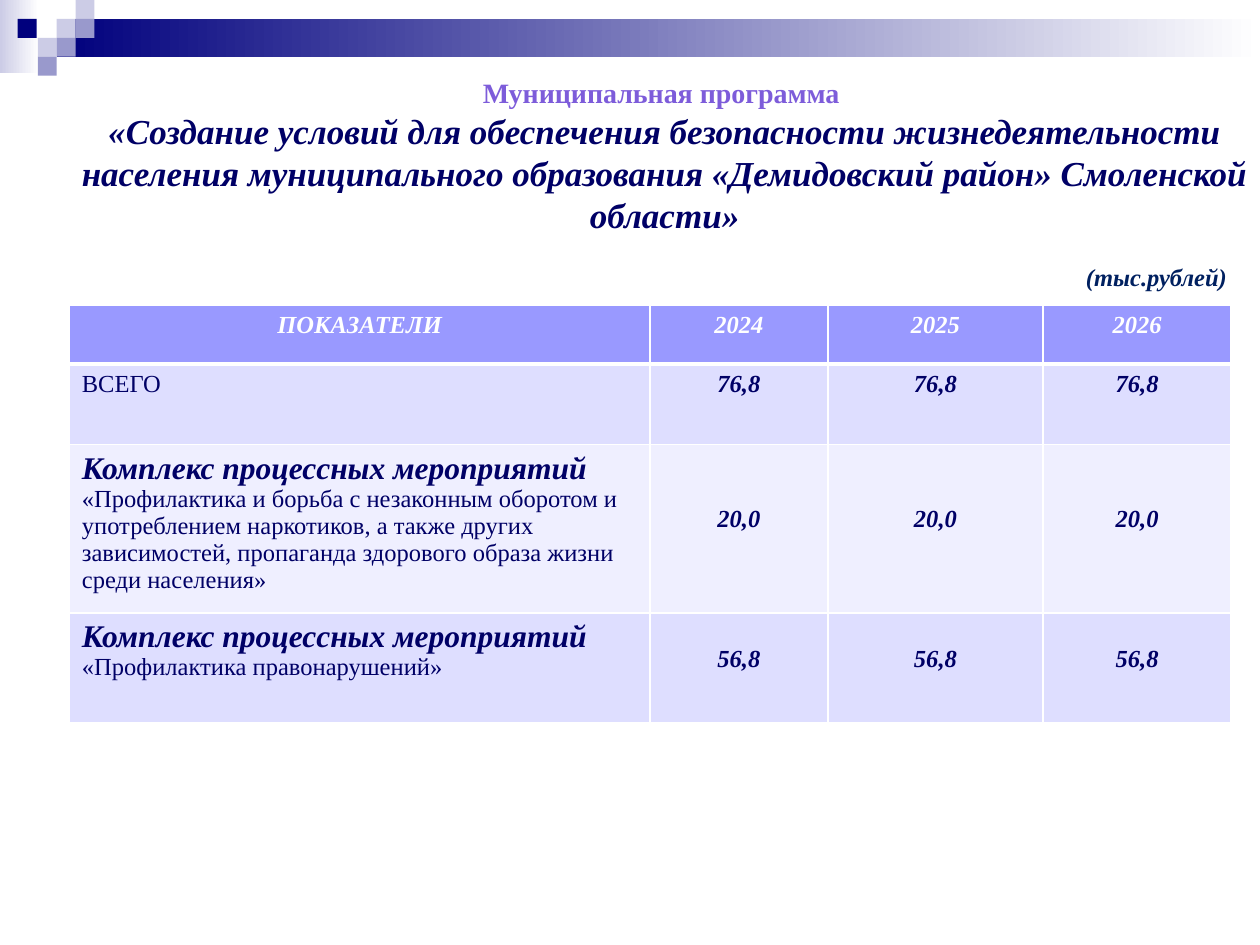
from lxml.etree import SubElement
from pptx import Presentation
from pptx.dml.color import RGBColor
from pptx.enum.shapes import MSO_SHAPE
from pptx.enum.text import MSO_AUTO_SIZE, PP_ALIGN
from pptx.oxml.ns import qn
from pptx.util import Inches, Pt

NAVY, PALE, MID = "00007D", "CCCCE6", "9999CC"
WHITE, INK = "FFFFFF", "000066"


def color(value):
    return RGBColor.from_string(value)


class SlideBuilder:
    font = "Times New Roman"

    def __init__(self, slide):
        self.slide = slide

    def rectangle(self, left, top, width, height, *fills):
        """One colour fills the rectangle; two make a left-to-right gradient."""
        shape = self.slide.shapes.add_shape(
            MSO_SHAPE.RECTANGLE, Inches(left), Inches(top), Inches(width), Inches(height))
        shape.shadow.inherit = False
        shape.line.fill.background()
        if len(fills) == 1:
            shape.fill.solid()
            shape.fill.fore_color.rgb = color(fills[0])
        else:
            shape.fill.gradient()
            shape.fill.gradient_angle = 0
            for stop, fill in zip(shape.fill.gradient_stops, fills):
                stop.color.rgb = color(fill)

    def run(self, paragraph, text, size, fill, bold=True, italic=True):
        run = paragraph.add_run()
        run.text = text
        run.font.name = self.font
        run.font.size = Pt(size)
        run.font.bold = bold
        run.font.italic = italic
        run.font.color.rgb = color(fill)

    def text(self, left, top, width, height, paragraphs, align, wrap=True):
        box = self.slide.shapes.add_textbox(
            Inches(left), Inches(top), Inches(width), Inches(height))
        frame = box.text_frame
        frame.word_wrap = wrap
        frame.auto_size = MSO_AUTO_SIZE.SHAPE_TO_FIT_TEXT
        for index, runs in enumerate(paragraphs):
            paragraph = frame.add_paragraph() if index else frame.paragraphs[0]
            paragraph.alignment = align
            for run in runs:
                self.run(paragraph, *run)

    def table(self, left, top, widths, heights):
        table = self.slide.shapes.add_table(
            len(heights), len(widths), Inches(left), Inches(top),
            Inches(sum(widths)), Inches(sum(heights))).table
        for column, width in zip(table.columns, widths):
            column.width = Inches(width)
        for row, height in zip(table.rows, heights):
            row.height = Inches(height)
        return table

    def cell(self, cell, runs, fill, align, margin_top, borders):
        cell.fill.solid()
        cell.fill.fore_color.rgb = color(fill)
        cell.margin_top = Inches(margin_top)
        paragraph = cell.text_frame.paragraphs[0]
        paragraph.alignment = align
        for run in runs:
            self.run(paragraph, *run)
        # Borders come before the fill in the cell properties
        properties = cell._tc.get_or_add_tcPr()
        for index, (side, width) in enumerate(zip("LRTB", borders)):
            line = SubElement(properties, qn(f"a:ln{side}"), w=str(Pt(width)))
            SubElement(SubElement(line, qn("a:solidFill")), qn("a:srgbClr"), val=WHITE)
            properties.insert(index, line)


def main():
    presentation = Presentation()
    presentation.slide_width, presentation.slide_height = Inches(10), Inches(7.5)
    builder = SlideBuilder(presentation.slides.add_slide(presentation.slide_layouts[6]))

    # Header band and squares
    builder.rectangle(0, 0, 0.31, 0.58, PALE, WHITE)
    builder.rectangle(0.45, 0.15, 9.55, 0.3, NAVY, WHITE)
    square = 0.15
    for left, top, fill in [
        (0.45, 0.15, PALE), (0.6, 0, PALE), (0.6, 0.15, MID), (0.3, 0.3, PALE),
        (0.14, 0.15, NAVY), (0.45, 0.3, MID), (0.3, 0.45, MID),
    ]:
        builder.rectangle(left, top, square, square, fill)

    # Title
    builder.text(0.55, 0.55, 9.45, 1.38, [
        [("Муниципальная программа ", 16, "7D5CDA", True, False)],
        [("«Создание условий для обеспечения безопасности жизнедеятельности населения "
          "муниципального образования «Демидовский район» Смоленской области»", 20, INK)],
    ], PP_ALIGN.CENTER)

    # Budget table: label runs, yearly values, fill, top margin of the values
    measures = ("Комплекс процессных мероприятий ", 18, INK)
    budget = [
        ([("ПОКАЗАТЕЛИ", 14, WHITE)], ["2024", "2025", "2026"], "9999FF", 0.05),
        ([("ВСЕГО", 14, INK, False, False)], ["76,8"] * 3, "DEDEFF", 0.05),
        ([measures,
          ("«Профилактика и борьба с незаконным оборотом и употреблением наркотиков, "
           "а также других зависимостей, пропаганда здорового образа жизни среди населения»",
           14, INK, False, False)], ["20,0"] * 3, "EFEFFF", 0.48),
        ([measures, ("«Профилактика правонарушений»", 14, INK, False, False)],
         ["56,8"] * 3, "DEDEFF", 0.26),
    ]
    table = builder.table(0.55, 2.42, [4.61, 1.41, 1.71, 1.49], [0.47, 0.64, 1.33, 0.87])
    for row, (label, values, fill, value_margin) in enumerate(budget):
        header = row == 0
        borders = (1, 1, 3 if row == 1 else 1, 3 if header else 1)
        builder.cell(table.cell(row, 0), label, fill,
                     PP_ALIGN.CENTER if header else PP_ALIGN.LEFT, 0.05, borders)
        for column, value in enumerate(values, 1):
            builder.cell(table.cell(row, column), [(value, 14, WHITE if header else INK)],
                         fill, PP_ALIGN.CENTER, value_margin, borders)

    # Unit of measure
    builder.text(8.52, 2.03, 1.33, 0.34, [[("(тыс.рублей)", 14, "002060")]],
                 PP_ALIGN.LEFT, wrap=False)

    presentation.save("out.pptx")


if __name__ == "__main__":
    main()
